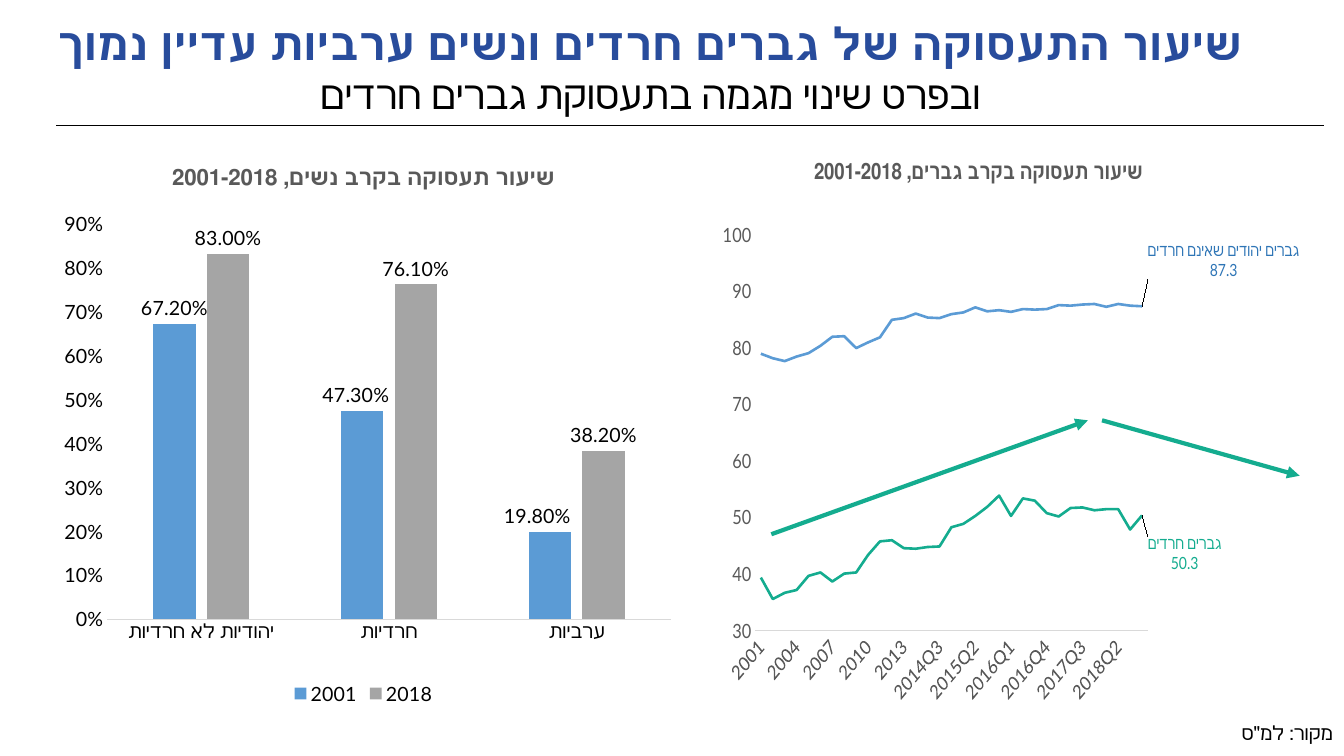
from dataclasses import dataclass
from lxml import etree
from pptx import Presentation
from pptx.chart.data import CategoryChartData
from pptx.dml.color import RGBColor
from pptx.enum.chart import XL_CHART_TYPE, XL_LABEL_POSITION, XL_LEGEND_POSITION, XL_TICK_MARK
from pptx.enum.shapes import MSO_CONNECTOR
from pptx.enum.text import MSO_ANCHOR, PP_ALIGN
from pptx.oxml import parse_xml
from pptx.oxml.ns import nsdecls, qn
from pptx.util import Inches, Pt

LINE, COLUMN = XL_CHART_TYPE.LINE, XL_CHART_TYPE.COLUMN_CLUSTERED
RIGHT, OUTSIDE = XL_LABEL_POSITION.RIGHT, XL_LABEL_POSITION.OUTSIDE_END
BOTTOM, NO_TICK = XL_LEGEND_POSITION.BOTTOM, XL_TICK_MARK.NONE
STRAIGHT, MIDDLE, TOP = MSO_CONNECTOR.STRAIGHT, MSO_ANCHOR.MIDDLE, MSO_ANCHOR.TOP
CENTER, FLUSH = PP_ALIGN.CENTER, PP_ALIGN.RIGHT


@dataclass
class Theme:
    font: str = "Lato"
    small: str = "Calibri"
    navy: str = "284C9C"
    black: str = "000000"
    blue: str = "5B9BD5"
    deep: str = "2E75B6"
    green: str = "14AC8F"
    gray: str = "A5A5A5"
    text: str = "595959"
    pale: str = "D9D9D9"
    head: int = 32
    sub: int = 28
    title: int = 16
    body: int = 14
    note: int = 12


class Deck:
    def __init__(self, theme):
        self.theme = theme
        self.file = Presentation()
        self.file.slide_width, self.file.slide_height = Inches(13.33), Inches(7.5)
        self.slide = self.file.slides.add_slide(self.file.slide_layouts[6])

    def style(self, font, size, color, bold=False, face=None):
        font.size, font.bold = Pt(size), bold
        font.name = face or self.theme.font
        font.color.rgb = RGBColor.from_string(color)

    def stroke(self, line, color, width):
        line.color.rgb = RGBColor.from_string(color)
        line.width = Pt(width)

    def text(self, box, lines, align, anchor=TOP, base=0.05):
        """Each line is (words, size, color, bold), set right to left."""
        frame = self.slide.shapes.add_textbox(*map(Inches, box)).text_frame
        frame.word_wrap, frame.vertical_anchor = True, anchor
        frame.margin_bottom = Inches(base)
        frame.text = "\n".join(line[0] for line in lines)
        for para, (_, size, color, bold) in zip(frame.paragraphs, lines):
            para.alignment = align
            para._p.get_or_add_pPr().set("rtl", "1")
            self.style(para.runs[0].font, size, color, bold)

    def line(self, start, end, color, width, arrow=False):
        link = self.slide.shapes.add_connector(
            STRAIGHT, *map(Inches, (*start, *end)))
        self.stroke(link.line, color, width)
        if arrow:
            etree.SubElement(link.line._get_or_add_ln(), qn("a:tailEnd"), type="triangle")
        etree.SubElement(link.element.spPr, qn("a:effectLst"))

    def place(self, node, index, **values):
        """Put a manual layout at the given child index."""
        for old in node.findall(qn("c:layout")):
            node.remove(old)
        layout = etree.Element(qn("c:layout"))
        manual = etree.SubElement(layout, qn("c:manualLayout"))
        for key, value in values.items():
            etree.SubElement(manual, qn("c:" + key), val=str(value))
        node.insert(index, layout)

    def mark(self, series, index, spot, x, y):
        """Shift the label of one point and return its node."""
        series.points[index].data_label.position = spot
        node = series._element.xpath(f'c:dLbls/c:dLbl[c:idx/@val="{index}"]')[0]
        self.place(node, 1, x=x, y=y)
        return node

    def tag(self, series, color, y):
        """Name and value at the end of a line, with a leader."""
        last = len(series.values) - 1
        series.data_labels.show_value = False
        self.style(series.points[last].data_label.font, self.theme.note, color)
        node = self.mark(series, last, RIGHT, 0.005, y)
        node.find(qn("c:showSerName")).set("val", "1")
        etree.SubElement(node, qn("c:separator")).text = "\n"
        node.getparent().append(parse_xml(
            f'<c:extLst {nsdecls("c")}><c:ext uri="{{CE6537A1-D6FC-4f65-9D91-7224C49458BB}}" '
            'xmlns:c15="http://schemas.microsoft.com/office/drawing/2012/chart">'
            '<c15:showLeaderLines val="1"/></c:ext></c:extLst>'))

    def chart(self, kind, box, title, cats, rows, form, plot, scale, face, size, ink):
        """Rows hold (name, values, color); plot is (target, x, y, w, h);
        scale is (low, high, step, format)."""
        theme = self.theme
        data = CategoryChartData(number_format=form)
        data.categories = cats
        for name, values, _ in rows:
            data.add_series(name, values)
        chart = self.slide.shapes.add_chart(kind, *map(Inches, box), data).chart
        self.style(chart.font, size, theme.black, face=face)
        chart.has_legend = False
        chart.has_title = True
        frame = chart.chart_title.text_frame
        frame.text = title
        self.style(frame.paragraphs[0].runs[0].font, theme.title, theme.text, True)
        target, x, y, w, h = plot
        self.place(chart.element.xpath(".//c:plotArea")[0], 0, layoutTarget=target,
                   xMode="edge", yMode="edge", x=x, y=y, w=w, h=h)
        # Axes
        side, base = chart.value_axis, chart.category_axis
        side.minimum_scale, side.maximum_scale, side.major_unit, form = scale
        side.tick_labels.number_format = form
        side.tick_labels.number_format_is_linked = False
        side.has_major_gridlines = False
        side.format.line.fill.background()
        self.stroke(base.format.line, theme.pale, 0.75)
        for axis in (side, base):
            axis.major_tick_mark = axis.minor_tick_mark = NO_TICK
            self.style(axis.tick_labels.font, theme.body, ink)
        # Series
        chart.plots[0].vary_by_categories = False
        for series, (_, _, color) in zip(chart.plots[0].series, rows):
            if kind == LINE:
                series.smooth = False
                self.stroke(series.format.line, color, 2.25)
            else:
                series.format.fill.solid()
                series.format.fill.fore_color.rgb = RGBColor.from_string(color)
        return chart


def main():
    theme = Theme()
    deck = Deck(theme)

    # Heading
    deck.text((0.01, 0.18, 12.88, 1.49), [
        ("שיעור התעסוקה של גברים חרדים ונשים ערביות עדיין נמוך", theme.head, theme.navy, True),
        ("ובפרט שינוי מגמה בתעסוקת גברים חרדים", theme.sub, theme.black, False),
    ], CENTER, MIDDLE, 0.58)

    # Men: employment over time
    years = [str(year) for year in range(2001, 2014)]
    years += [f"{year}Q{part}" for year in range(2014, 2019) for part in range(1, 5)]
    haredi = [39.3, 35.5, 36.6, 37.1, 39.6, 40.2, 38.6, 40.0, 40.2, 43.3, 45.7,
              45.9, 44.5, 44.4, 44.7, 44.8, 48.2, 48.8, 50.2, 51.8, 53.8, 50.2,
              53.3, 52.9, 50.7, 50.1, 51.6, 51.7, 51.2, 51.4, 51.4, 47.8, 50.3]
    others = [78.9, 78.1, 77.6, 78.4, 79.0, 80.3, 81.9, 82.0, 79.9, 80.9, 81.8,
              84.9, 85.2, 86.0, 85.3, 85.2, 85.9, 86.2, 87.1, 86.4, 86.6, 86.3,
              86.8, 86.7, 86.8, 87.5, 87.4, 87.6, 87.7, 87.2, 87.7, 87.4, 87.3]
    men = deck.chart(
        LINE, (7.07, 1.54, 5.82, 5.55), "שיעור תעסוקה בקרב גברים, 2001-2018", years,
        [("גברים חרדים", haredi, theme.green),
         ("גברים יהודים שאינם חרדים", others, theme.blue)],
        "0.0", ("outer", 0.02, 0.12, 0.87, 0.86), (30, 100, 10, "0"),
        theme.small, theme.note, theme.text)
    deck.place(men.element.xpath(".//c:title")[0], 1,
               xMode="edge", yMode="edge", x=0.2, y=0)
    low, high = men.plots[0].series
    deck.tag(low, theme.green, 0.07)
    deck.tag(high, theme.deep, -0.08)
    base = men.element.xpath(".//c:catAx")[0]
    base.find(qn("c:txPr")).find(qn("a:bodyPr")).set("rot", "-2700000")
    skip = etree.Element(qn("c:tickLblSkip"), val="3")
    base.find(qn("c:noMultiLvlLbl")).addprevious(skip)

    # Trend arrows and heading rule
    deck.line((7.65, 5.3), (10.79, 4.17), theme.green, 3, True)
    deck.line((10.93, 4.17), (12.89, 4.72), theme.green, 3, True)
    deck.line((0.56, 1.24), (13.13, 1.24), theme.black, 0.5)

    # Source note
    deck.text((11.22, 7.1, 2.1, 0.34),
              [('מקור: למ"ס', theme.body, theme.black, False)], FLUSH)

    # Women: first and last year
    women = deck.chart(
        COLUMN, (0.43, 1.43, 6.35, 5.61), "שיעור תעסוקה בקרב נשים, 2001-2018",
        ["יהודיות לא חרדיות", "חרדיות", "ערביות"],
        [("2001", (0.672, 0.473, 0.198), theme.blue),
         ("2018", (0.83, 0.761, 0.382), theme.gray)],
        "0.00%", ("inner", 0.1, 0.14, 0.88, 0.7), (0, 0.9, 0.1, "0%"),
        theme.font, theme.body, theme.black)
    women.has_legend = True
    women.legend.position, women.legend.include_in_layout = BOTTOM, False
    bars = women.plots[0]
    bars.gap_width, bars.overlap = 219, -27
    for series in bars.series:
        labels = series.data_labels
        labels.show_value, labels.position = True, OUTSIDE
        labels.number_format, labels.number_format_is_linked = "0.00%", False
    for index, shift in ((1, -0.01), (2, -0.02)):
        deck.mark(bars.series[0], index, OUTSIDE, shift, 0)

    deck.file.save("out.pptx")


if __name__ == "__main__":
    main()
